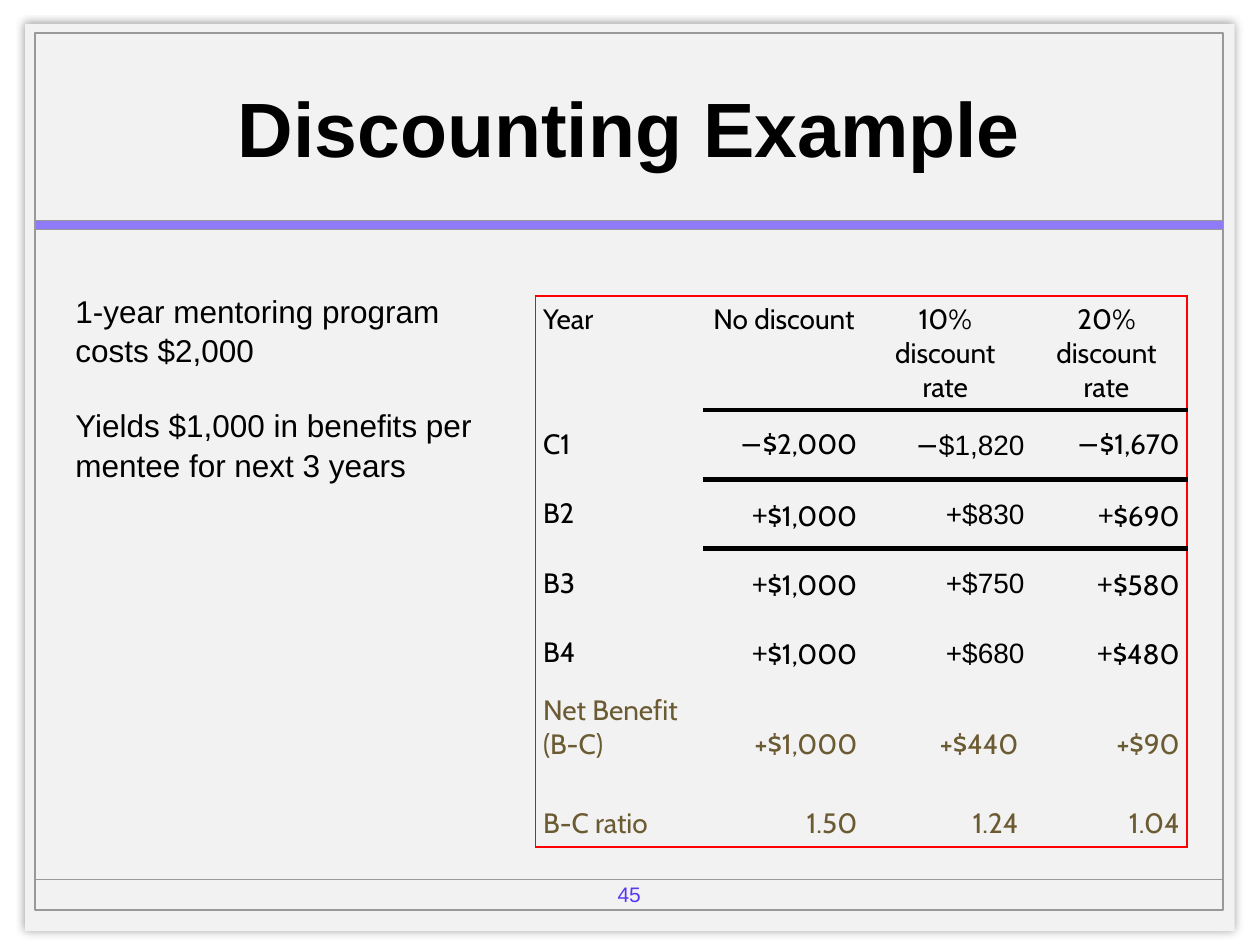
from lxml.etree import SubElement
from pptx import Presentation
from pptx.dml.color import RGBColor
from pptx.enum.shapes import MSO_CONNECTOR, MSO_SHAPE
from pptx.enum.text import MSO_ANCHOR, PP_ALIGN
from pptx.oxml.ns import qn
from pptx.util import Cm, Pt

TITLE = "Discounting Example"
NOTES = [
    "1-year mentoring program costs $2,000",
    "Yields $1,000 in benefits per mentee for next 3 years",
]
ROWS = [
    ["Year", "No discount", "10%\ndiscount rate", "20% discount rate"],
    ["C1", "−$2,000", "−$1,820", "−$1,670"],
    ["B2", "+$1,000", "+$830", "+$690"],
    ["B3", "+$1,000", "+$750", "+$580"],
    ["B4", "+$1,000", "+$680", "+$480"],
    ["Net Benefit (B-C)", "+$1,000", "+$440", "+$90"],
    ["B-C ratio", "1.50", "1.24", "1.04"],
]
WIDTHS = [3.38] + [3.25] * 3
HEIGHTS = [2.29] + [1.4] * 4 + [1.6] * 2
LAST = len(ROWS) - 1
EDGE = ("FF0000", 1)
RULE = ("000000", 3)
NO_STYLE = "{2D5ABB26-0587-4C30-8999-92F81FD0307C}"
LEFT, MID, RIGHT = PP_ALIGN.LEFT, PP_ALIGN.CENTER, PP_ALIGN.RIGHT


def rgb(code):
    return RGBColor.from_string(code)


def text(frame, paras, font="Arial", size=18, color="000000", bold=False,
         align=LEFT, anchor=MSO_ANCHOR.TOP, gap=0, lead=None):
    """Fill a frame with paragraphs, each a string or a list of (string, font) runs."""
    frame.word_wrap = True
    frame.vertical_anchor = anchor
    for i, runs in enumerate(paras):
        para = frame.add_paragraph() if i else frame.paragraphs[0]
        para.alignment = align
        para.line_spacing = lead
        para.space_before = Pt(gap if i else 0)
        for part, face in [(runs, font)] if isinstance(runs, str) else runs:
            run = para.add_run()
            run.text = part
            run.font.name, run.font.size, run.font.bold = face, Pt(size), bold
            run.font.color.rgb = rgb(color)


def rect(slide, box, fill=None, line=None, width=1):
    shape = slide.shapes.add_shape(MSO_SHAPE.RECTANGLE, *map(Cm, box))
    shape.shadow.inherit = False
    if fill:
        shape.fill.solid()
        shape.fill.fore_color.rgb = rgb(fill)
    else:
        shape.fill.background()
    if line:
        shape.line.color.rgb = rgb(line)
        shape.line.width = Pt(width)
    else:
        shape.line.fill.background()
    return shape


def tint(node, code):
    return SubElement(node, qn("a:srgbClr"), val=code)


def glow(shape):
    effects = shape._element.spPr.find(qn("a:effectLst"))
    outer = SubElement(effects, qn("a:outerShdw"), blurRad=str(Pt(5)),
                       dist="0", dir="0", algn="ctr", rotWithShape="0")
    SubElement(tint(outer, "000000"), qn("a:alpha"), val="40000")


def frame(slide):
    glow(rect(slide, (0.51, 0.48, 24.38, 18.29), "F2F2F2"))
    rect(slide, (0.71, 0.66, 23.95, 17.68), line="999999")
    rule = slide.shapes.add_connector(
        MSO_CONNECTOR.STRAIGHT, *map(Cm, (0.71, 17.73, 24.66, 17.73)))
    rule.line.color.rgb = rgb("999999")
    rule.line.width = Pt(1)
    SubElement(rule._element.spPr, qn("a:effectLst"))
    rect(slide, (0.71, 4.45, 23.95, 0.18), "8F7AF8", "999999", 0.25)


def border(cell, sides):
    props = cell._tc.get_or_add_tcPr()
    for tag, style in sides.items():
        if style:
            code, width = style
            line = SubElement(props, qn("a:" + tag), w=str(Pt(width)))
            tint(SubElement(line, qn("a:solidFill")), code)


def split(value, row, col):
    """Give the runs of a value, with the fonts that its place in the grid calls for."""
    if col == 2 and 1 <= row <= 4:
        if value[0] == "−":
            return [("−", "Cabin"), (value[1:], "Arial")]
        return [(value, "Arial")]
    if col and 2 <= row <= 4:
        return [("+", "Noto Sans CJK JP"), (value[1:], "Cabin")]
    return [(value, "Cabin")]


def anchor(row, col):
    if row == 0 or (row == 5 and col == 0):
        return MSO_ANCHOR.TOP
    return MSO_ANCHOR.MIDDLE if row <= 4 else MSO_ANCHOR.BOTTOM


def fill(cell, value, row, col):
    tight = col == 2 and 1 <= row <= 4
    cell.margin_left = cell.margin_right = Cm(0.03 if tight else 0.15)
    cell.margin_top = Cm(0.03 if tight else 0.13)
    cell.margin_bottom = Cm(0 if tight else 0.13)
    paras = [split(part, row, col) for part in value.split("\n")]
    text(cell.text_frame, paras, size=16,
         color="6B5B32" if row >= 5 else "000000",
         align=LEFT if col == 0 else RIGHT if row else MID)
    cell.vertical_anchor = anchor(row, col)
    border(cell, {
        "lnL": EDGE if col == 0 else None,
        "lnR": EDGE if col == 3 else None,
        "lnT": EDGE if row == 0 else RULE if col and row <= 2 else None,
        "lnB": EDGE if row == LAST else RULE if col and row <= 1 else None,
    })
    cell.fill.background()


def grid(slide):
    box = (10.8, 5.97, sum(WIDTHS), sum(HEIGHTS))
    table = slide.shapes.add_table(len(ROWS), len(WIDTHS), *map(Cm, box)).table
    table.first_row = table.horz_banding = False
    table._tbl.tblPr.find(qn("a:tableStyleId")).text = NO_STYLE
    for col, width in zip(table.columns, WIDTHS):
        col.width = Cm(width)
    for r, (values, height) in enumerate(zip(ROWS, HEIGHTS)):
        table.rows[r].height = Cm(height)
        for c, value in enumerate(values):
            fill(table.cell(r, c), value, r, c)


def main():
    deck = Presentation()
    deck.slide_width, deck.slide_height = Cm(25.4), Cm(19.05)
    slide = deck.slides.add_slide(deck.slide_layouts[5])
    frame(slide)
    title = slide.shapes.title
    slide.shapes._spTree.append(title._element)
    title.left, title.top, title.width, title.height = map(
        Cm, (2.49, 0.69, 20.4, 3.73))
    text(title.text_frame, [TITLE], size=44, bold=True, align=MID,
         anchor=MSO_ANCHOR.MIDDLE)
    body = slide.shapes.add_textbox(*map(Cm, (1.27, 5.72, 8.69, 11.15)))
    text(body.text_frame, NOTES, gap=20, lead=1.05)
    grid(slide)
    page = slide.shapes.add_textbox(*map(Cm, (11.63, 17.65, 2.11, 0.76)))
    text(page.text_frame, ["45"], size=12, color="5737F4", align=MID,
         anchor=MSO_ANCHOR.MIDDLE)
    deck.save("out.pptx")


if __name__ == "__main__":
    main()
